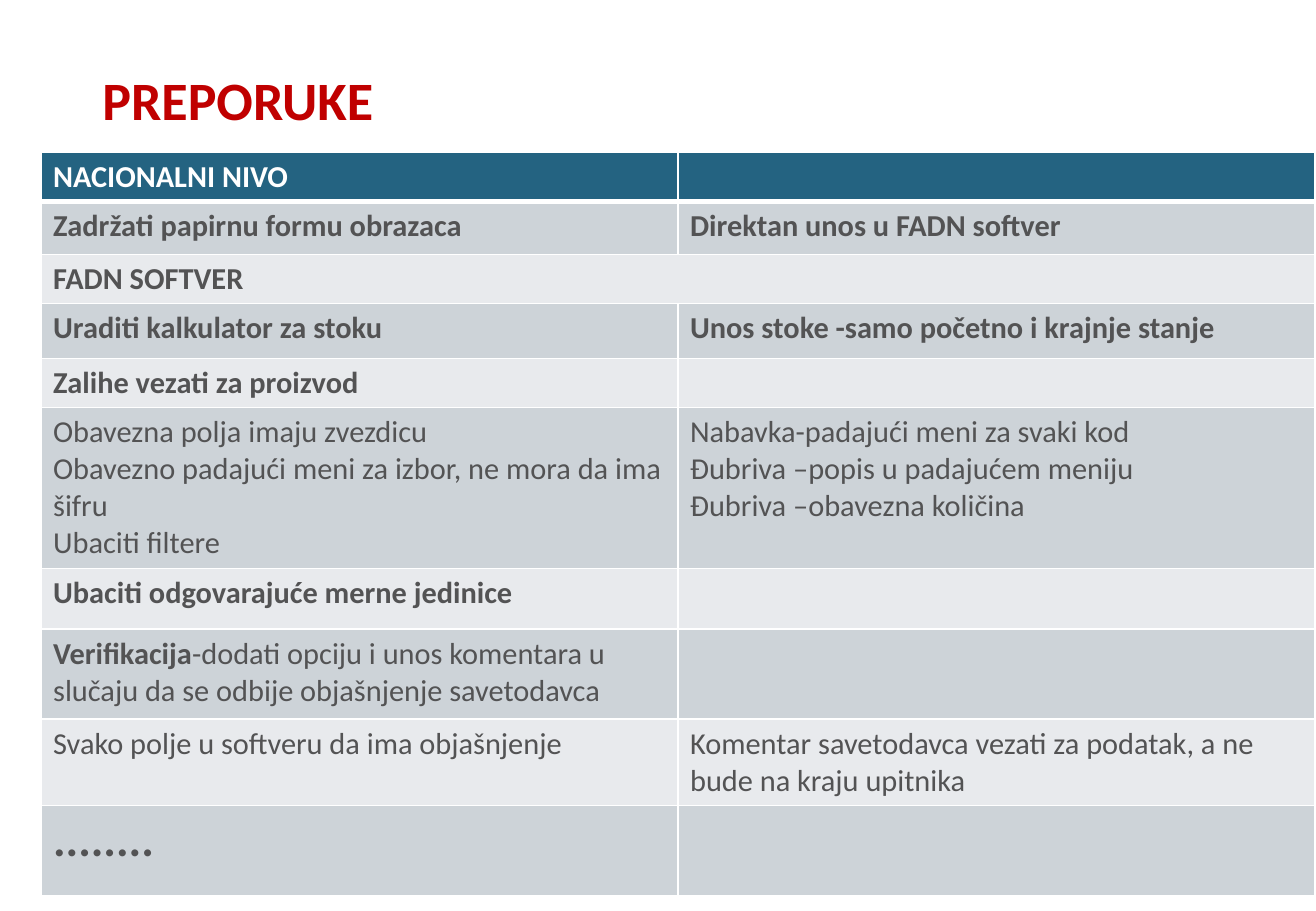
import pptx
import pptx.dml.color
import pptx.enum.text
import pptx.oxml
import pptx.oxml.ns
import pptx.util

TITLE = "PREPORUKE"
ROWS = [
    (47, [("NACIONALNI NIVO", True)], []),
    (53, [("Zadržati papirnu formu obrazaca", True)], [("Direktan unos u FADN softver", True)]),
    (46, [("FADN SOFTVER", True)], []),
    (55, [("Uraditi kalkulator za stoku", True)],
     [("Unos stoke -samo početno i krajnje stanje", True)]),
    (47, [("Zalihe vezati za proizvod", True)], []),
    (148,
     [("Obavezna polja imaju zvezdicu", False),
      ("Obavezno padajući meni za izbor, ne mora da ima šifru", False),
      ("Ubaciti filtere", False)],
     [("Nabavka-padajući meni za svaki kod", False),
      ("Đubriva –popis u padajućem meniju", False),
      ("Đubriva –obavezna količina", False)]),
    (61, [("Ubaciti odgovarajuće merne jedinice", True)], []),
    (90, [("Verifikacija", True, "-dodati opciju i unos komentara u slučaju da se odbije "
           "objašnjenje savetodavca", False)], []),
    (80, [("Svako polje u softveru da ima objašnjenje", False)],
     [("Komentar savetodavca vezati za podatak, a ne bude na kraju upitnika", False)]),
    (90, [("........", True)], []),
]
SPANNED_ROW = 2
DOTS_ROW = len(ROWS) - 1
COLUMN_WIDTH = 637
COLORS = {"title": "C00000", "header": "246381", "odd": "CDD3D8", "even": "E8EAED",
          "text": "535354", "white": "FFFFFF"}
FONT = "Calibri"
EMU_PER_PX = 7526


def px(value):
    return pptx.util.Emu(value * EMU_PER_PX)


def format_font(font, size, color, bold):
    values = {"name": FONT, "size": pptx.util.Pt(size), "bold": bold}
    for name, value in values.items():
        setattr(font, name, value)
    font.color.rgb = pptx.dml.color.RGBColor.from_string(COLORS[color])


def add_borders(cell, row_index):
    properties = cell._tc.get_or_add_tcPr()
    widths = {"L": 1, "R": 1, "T": 3 if row_index == 1 else 1, "B": 3 if row_index == 0 else 1}
    for side, width in widths.items():
        properties.append(pptx.oxml.parse_xml(
            f'<a:ln{side} {pptx.oxml.ns.nsdecls("a")} w="{pptx.util.Pt(width)}">'
            f'<a:solidFill><a:srgbClr val="{COLORS["white"]}"/></a:solidFill></a:ln{side}>'))


def fill_cell(cell, row_index, lines):
    add_borders(cell, row_index)
    fill = "header" if row_index == 0 else "odd" if row_index % 2 else "even"
    cell.fill.solid()
    cell.fill.fore_color.rgb = pptx.dml.color.RGBColor.from_string(COLORS[fill])
    color = "white" if row_index == 0 else "text"
    size = 28 if row_index == DOTS_ROW else 18
    frame = cell.text_frame
    format_font(frame.paragraphs[0].font, 18, color, False)
    for index, line in enumerate(lines):
        paragraph = frame.add_paragraph() if index else frame.paragraphs[0]
        for text, bold in zip(line[::2], line[1::2]):
            run = paragraph.add_run()
            run.text = text
            format_font(run.font, size, color, bold)


def main():
    presentation = pptx.Presentation()
    presentation.slide_width, presentation.slide_height = px(1316), px(911)
    slide = presentation.slides.add_slide(presentation.slide_layouts[5])

    title = slide.shapes.title
    box = {"left": 0, "top": 40, "width": 476, "height": 118}
    for name, value in box.items():
        setattr(title, name, px(value))
    title.text_frame.text = TITLE
    title.text_frame.vertical_anchor = pptx.enum.text.MSO_ANCHOR.MIDDLE
    paragraph = title.text_frame.paragraphs[0]
    paragraph.alignment = pptx.enum.text.PP_ALIGN.CENTER
    format_font(paragraph.runs[0].font, 32, "title", True)

    height = sum(row[0] for row in ROWS)
    table = slide.shapes.add_table(len(ROWS), 2, px(41), px(152), px(2 * COLUMN_WIDTH),
                                   px(height)).table
    for column in table.columns:
        column.width = px(COLUMN_WIDTH)
    for row_index, (row_height, *cells) in enumerate(ROWS):
        table.rows[row_index].height = px(row_height)
        for column_index, lines in enumerate(cells):
            fill_cell(table.cell(row_index, column_index), row_index, lines)
    table.cell(SPANNED_ROW, 0).merge(table.cell(SPANNED_ROW, 1))
    presentation.save("out.pptx")


if __name__ == "__main__":
    main()
